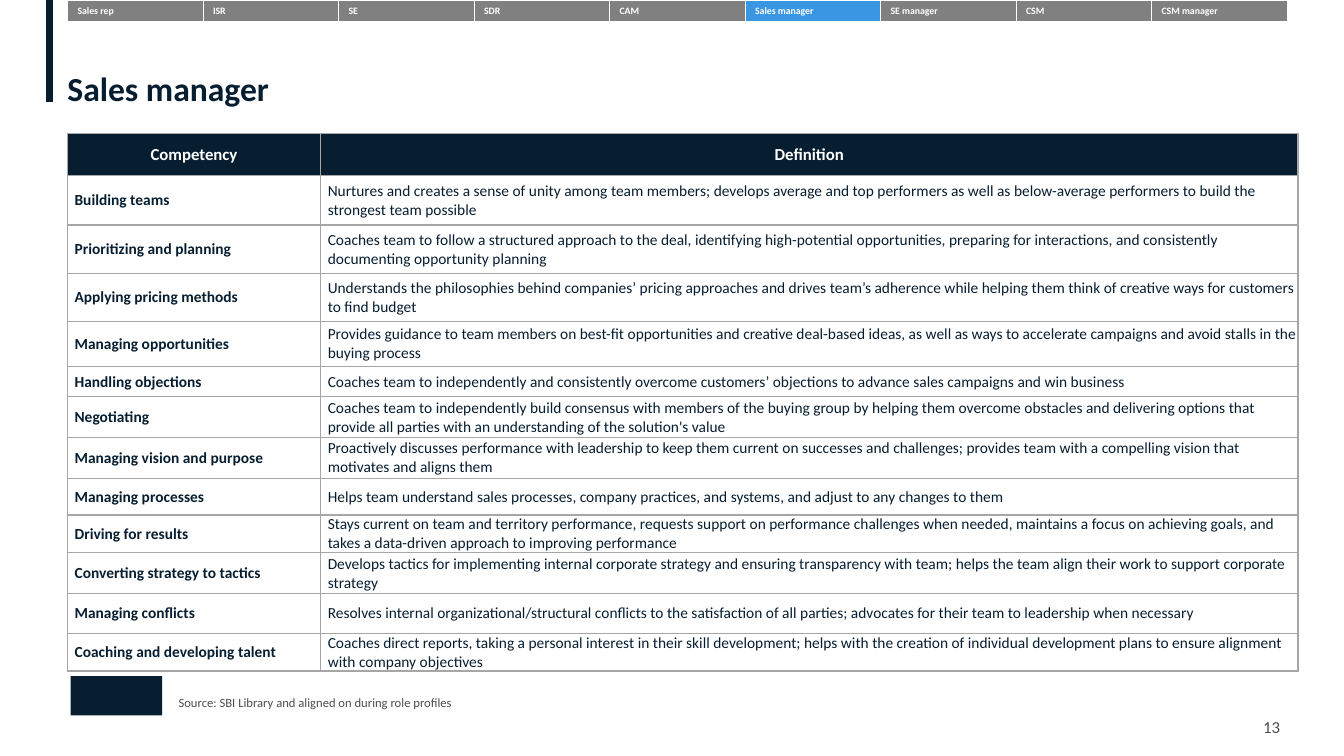
from lxml.etree import SubElement
from pptx import Presentation
from pptx.dml.color import RGBColor
from pptx.enum.shapes import MSO_CONNECTOR as Connector, MSO_SHAPE as Shape
from pptx.enum.text import MSO_ANCHOR as Anchor, PP_ALIGN as Align
from pptx.oxml.ns import qn
from pptx.util import Cm, Pt

FONT = "Calibri"
NAVY, WHITE, GREY, BLUE = "071E31", "FFFFFF", "808080", "3896E3"
TEXT_GREY, BORDER_GREY = "4D4D4D", "A6A6A6"
LEFT = 1.7

ROLES = ["Sales rep", "ISR", "SE", "SDR", "CAM", "Sales manager",
         "SE manager", "CSM", "CSM manager"]
CURRENT_ROLE = "Sales manager"

COMPETENCIES = [
    ("Competency", "Definition", 1.07),
    ("Building teams",
     "Nurtures and creates a sense of unity among team members; develops average and top performers "
     "as well as below-average performers to build the strongest team possible", 1.24),
    ("Prioritizing and planning",
     "Coaches team to follow a structured approach to the deal, identifying high-potential "
     "opportunities, preparing for interactions, and consistently documenting opportunity planning", 1.23),
    ("Applying pricing methods",
     "Understands the philosophies behind companies’ pricing approaches and drives team’s adherence "
     "while helping them think of creative ways for customers to find budget", 1.2),
    ("Managing opportunities",
     "Provides guidance to team members on best-fit opportunities and creative deal-based ideas, as "
     "well as ways to accelerate campaigns and avoid stalls in the buying process", 1.14),
    ("Handling objections",
     "Coaches team to independently and consistently overcome customers’ objections to advance sales "
     "campaigns and win business", 0.76),
    ("Negotiating",
     "Coaches team to independently build consensus with members of the buying group by helping them "
     "overcome obstacles and delivering options that provide all parties with an understanding of the "
     "solution's value", 1.03),
    ("Managing vision and purpose",
     "Proactively discusses performance with leadership to keep them current on successes and "
     "challenges; provides team with a compelling vision that motivates and aligns them", 1.03),
    ("Managing processes",
     "Helps team understand sales processes, company practices, and systems, and adjust to any "
     "changes to them", 0.92),
    ("Driving for results",
     "Stays current on team and territory performance, requests support on performance challenges "
     "when needed, maintains a focus on achieving goals, and takes a data-driven approach to "
     "improving performance", 0.95),
    ("Converting strategy to tactics",
     "Develops tactics for implementing internal corporate strategy and ensuring transparency with "
     "team; helps the team align their work to support corporate strategy", 1.03),
    ("Managing conflicts",
     "Resolves internal organizational/structural conflicts to the satisfaction of all parties; "
     "advocates for their team to leadership when necessary", 1.0),
    ("Coaching and developing talent",
     "Coaches direct reports, taking a personal interest in their skill development; helps with the "
     "creation of individual development plans to ensure alignment with company objectives", 0.95),
]


def color(value):
    return RGBColor.from_string(value)


def style_font(paragraph, size, value, bold=False):
    font = paragraph.font
    font.name, font.size, font.bold = FONT, Pt(size), bold
    font.color.rgb = color(value)


def add_text(slide, box, text, size, value, bold=False, anchor=Anchor.TOP):
    frame = slide.shapes.add_textbox(*map(Cm, box)).text_frame
    frame.margin_left = frame.margin_right = frame.margin_top = frame.margin_bottom = 0
    frame.word_wrap = True
    frame.vertical_anchor = anchor
    paragraph = frame.paragraphs[0]
    paragraph.text = text
    style_font(paragraph, size, value, bold)
    return paragraph


def add_plain_table(slide, box, rows, columns):
    table = slide.shapes.add_table(rows, columns, *map(Cm, box)).table
    table.first_row = table.horz_banding = False
    return table


def set_borders(cell, sides, value, width):
    properties = cell._tc.get_or_add_tcPr()
    for side in sides:
        line = SubElement(properties, qn(f"a:ln{side}"), w=str(Pt(width)))
        fill = SubElement(line, qn("a:solidFill"))
        SubElement(fill, qn("a:srgbClr"), val=value)


def fill_cell(cell, value=None):
    if value:
        cell.fill.solid()
        cell.fill.fore_color.rgb = color(value)
    else:
        cell.fill.background()


def add_role_tabs(slide, box):
    table = add_plain_table(slide, box, 1, len(ROLES))
    for cell, role in zip(table.rows[0].cells, ROLES):
        cell.text = role
        set_borders(cell, "LR", WHITE, 0.5)
        fill_cell(cell, BLUE if role == CURRENT_ROLE else GREY)
        style_font(cell.text_frame.paragraphs[0], 7, WHITE, True)


def add_heading(slide, box):
    left, top, width, height = box
    accent = slide.shapes.add_connector(
        Connector.STRAIGHT, Cm(left), Cm(top), Cm(left), Cm(top + 2.57))
    accent.line.color.rgb = color(NAVY)
    accent.line.width = Pt(5)
    SubElement(accent._element.spPr, qn("a:effectLst"))
    title_box = (LEFT, top + 1.78, left + width - LEFT, height - 1.78)
    title = add_text(slide, title_box, CURRENT_ROLE, 24, NAVY, True, Anchor.BOTTOM)
    title.line_spacing = 0.9


def add_competency_table(slide, box):
    table = add_plain_table(slide, box, len(COMPETENCIES), 2)
    name_width = 6.38
    table.columns[0].width = Cm(name_width)
    table.columns[1].width = Cm(box[2] - name_width)
    for index, (name, definition, height) in enumerate(COMPETENCIES):
        row = table.rows[index]
        row.height = Cm(height)
        header = index == 0
        for column, (cell, text) in enumerate(zip(row.cells, (name, definition))):
            cell.text = text
            cell.vertical_anchor = Anchor.MIDDLE
            cell.margin_left = Cm(0 if header else 0.18)
            cell.margin_right = cell.margin_top = cell.margin_bottom = 0
            set_borders(cell, "LRTB", BORDER_GREY, 1)
            fill_cell(cell, NAVY if header else None)
            paragraph = cell.text_frame.paragraphs[0]
            paragraph.alignment = Align.CENTER if header else Align.LEFT
            style_font(paragraph, 12 if header else 11, WHITE if header else NAVY,
                       header or column == 0)


def add_footer(slide, box):
    left, top, width, height = box
    mark = slide.shapes.add_shape(Shape.RECTANGLE, Cm(left + 0.08), Cm(top), Cm(2.31), Cm(0.99))
    mark.shadow.inherit = False
    mark.fill.solid()
    mark.fill.fore_color.rgb = color(NAVY)
    mark.line.fill.background()
    add_text(slide, (left + 2.8, top + 0.48, 16.48, 0.38),
             "Source: SBI Library and aligned on during role profiles", 9, TEXT_GREY)
    add_text(slide, (left + width - 0.86, top + height - 0.51, 0.86, 0.51),
             "13", 12, TEXT_GREY, anchor=Anchor.MIDDLE)


def main():
    presentation = Presentation()
    presentation.slide_width, presentation.slide_height = Cm(33.87), Cm(19.05)
    slide = presentation.slides.add_slide(presentation.slide_layouts[6])
    add_heading(slide, (1.25, 0, 31.97, 2.74))
    add_competency_table(slide, (LEFT, 3.36, 31.01, 13.55))
    add_footer(slide, (LEFT, 17.04, 30.99, 1.53))
    add_role_tabs(slide, (LEFT, 0, 30.74, 0.51))
    presentation.save("out.pptx")


if __name__ == "__main__":
    main()
